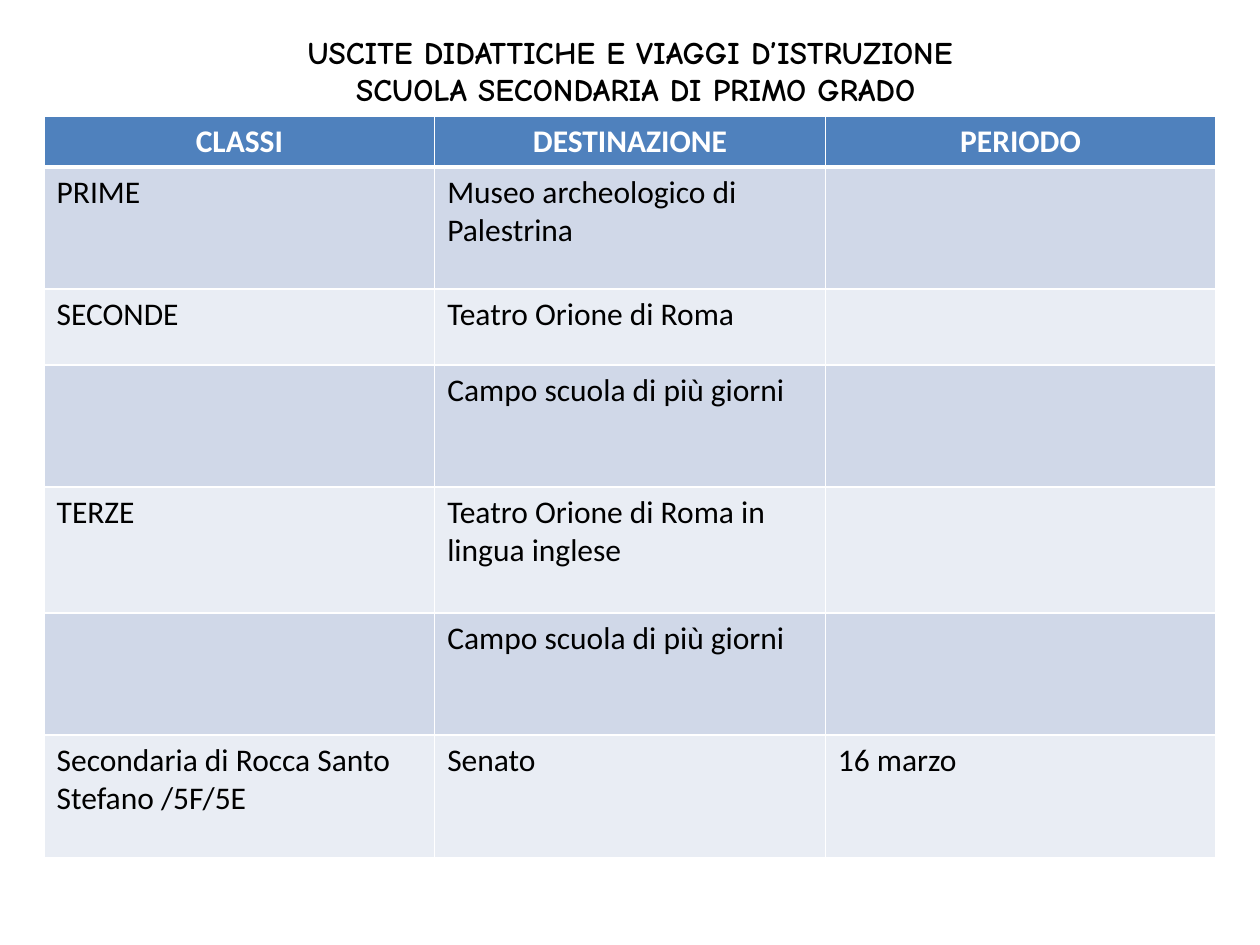
from dataclasses import dataclass

from lxml.etree import SubElement
from pptx import Presentation
from pptx.dml.color import RGBColor
from pptx.enum.text import MSO_AUTO_SIZE, PP_ALIGN
from pptx.oxml.ns import qn
from pptx.slide import Slide
from pptx.table import Table, _Cell
from pptx.text.text import TextFrame
from pptx.util import Inches, Pt

HEADER_FILL = "4F81BD"
BAND_FILLS = ("E9EDF4", "D0D8E8")
WHITE = "FFFFFF"
BLACK = "000000"
COLUMN_WIDTH = 3.1


@dataclass
class Trip:
    classes: str
    destination: str
    period: str = ""
    height: float = 0.97


HEADER = Trip("CLASSI", "DESTINAZIONE", "PERIODO", 0.39)
TRIPS = [
    Trip("PRIME", "Museo archeologico di Palestrina"),
    Trip("SECONDE", "Teatro Orione di Roma", height=0.6),
    Trip("", "Campo scuola di più giorni"),
    Trip("TERZE", "Teatro Orione di Roma in lingua inglese", height=1.0),
    Trip("", "Campo scuola di più giorni"),
    Trip("Secondaria di Rocca Santo Stefano /5F/5E", "Senato", "16 marzo"),
]


def color(value: str) -> RGBColor:
    return RGBColor.from_string(value)


def format_text(text_frame: TextFrame, font_name: str, font_color: str,
                bold: bool, alignment: PP_ALIGN) -> None:
    for paragraph in text_frame.paragraphs:
        paragraph.alignment = alignment
        paragraph.font.size = Pt(18)
        for run in paragraph.runs:
            run.font.name = font_name
            run.font.size = Pt(18)
            run.font.bold = bold
            run.font.color.rgb = color(font_color)


def draw_borders(cell: _Cell, bottom: float, top: float) -> None:
    properties = cell._tc.get_or_add_tcPr()
    for side, width in (("L", 1), ("R", 1), ("T", top), ("B", bottom)):
        line = SubElement(properties, qn(f"a:ln{side}"), w=str(Pt(width)))
        fill = SubElement(line, qn("a:solidFill"))
        SubElement(fill, qn("a:srgbClr"), val=WHITE)


def draw_row(table: Table, index: int, trip: Trip) -> None:
    is_header = index == 0
    table.rows[index].height = Inches(trip.height)
    texts = (trip.classes, trip.destination, trip.period)
    for cell, text in zip(table.rows[index].cells, texts):
        cell.text_frame.text = text
        format_text(cell.text_frame, "Calibri", WHITE if is_header else BLACK,
                    is_header, PP_ALIGN.CENTER if is_header else PP_ALIGN.LEFT)
        draw_borders(cell, bottom=3 if is_header else 1, top=3 if index == 1 else 1)
        cell.fill.solid()
        cell.fill.fore_color.rgb = color(HEADER_FILL if is_header else BAND_FILLS[index % 2])


def draw_trips(slide: Slide) -> None:
    rows = [HEADER, *TRIPS]
    table = slide.shapes.add_table(
        len(rows), 3, Inches(0.35), Inches(0.92), Inches(3 * COLUMN_WIDTH),
        Inches(sum(row.height for row in rows))).table
    for column in table.columns:
        column.width = Inches(COLUMN_WIDTH)
    for index, row in enumerate(rows):
        draw_row(table, index, row)


def draw_title(slide: Slide) -> None:
    title = slide.shapes.add_textbox(Inches(0.12), Inches(0.21), Inches(9.85), Inches(0.71))
    text_frame = title.text_frame
    text_frame.word_wrap = True
    text_frame.auto_size = MSO_AUTO_SIZE.SHAPE_TO_FIT_TEXT
    text_frame.text = ("USCITE DIDATTICHE E VIAGGI D’ISTRUZIONE \n"
                       "SCUOLA SECONDARIA DI PRIMO GRADO")
    format_text(text_frame, "Comic Neue", BLACK, True, PP_ALIGN.CENTER)


def main() -> None:
    presentation = Presentation()
    presentation.slide_width = Inches(10)
    presentation.slide_height = Inches(7.5)
    slide = presentation.slides.add_slide(presentation.slide_layouts[6])
    draw_trips(slide)
    draw_title(slide)
    presentation.save("out.pptx")


if __name__ == "__main__":
    main()
